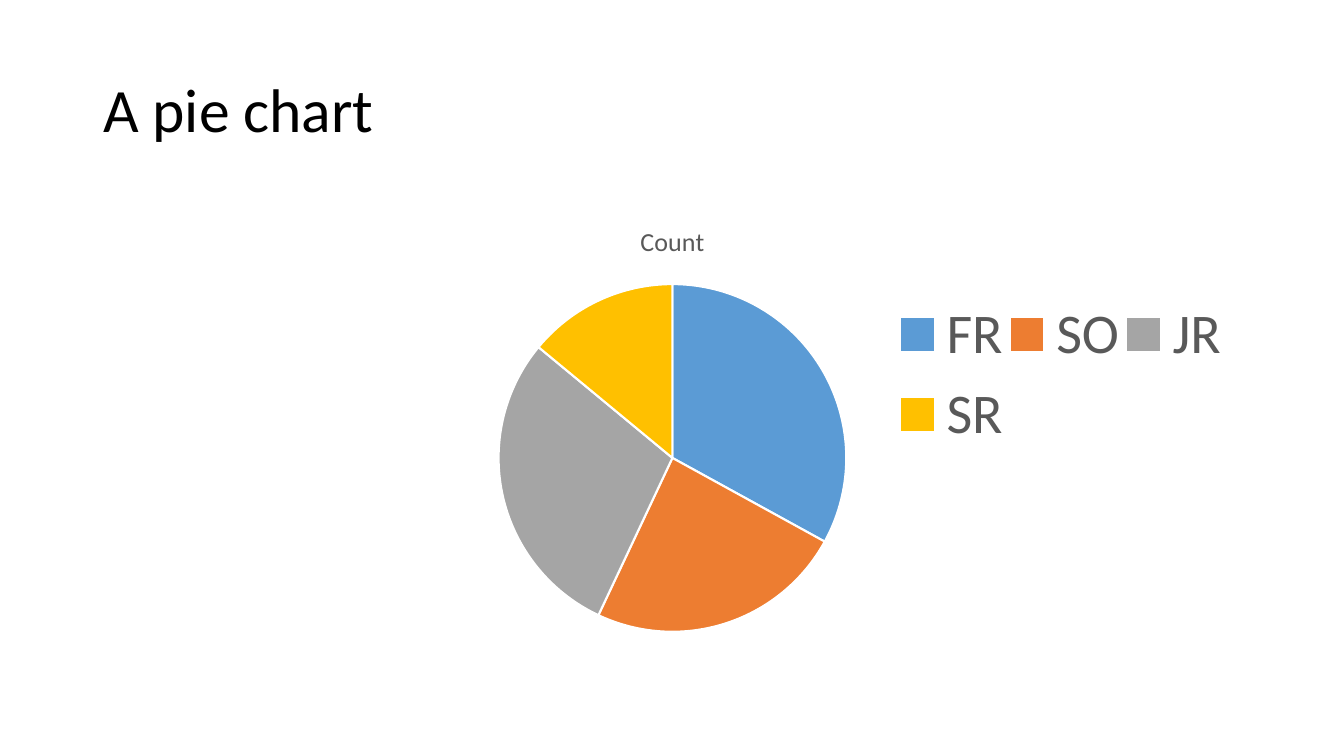
"""Build a slide with a title and a pie chart of counts by class year."""
import pptx
import pptx.chart.data
import pptx.dml.color
import pptx.enum.chart
import pptx.enum.text
import pptx.oxml
import pptx.oxml.ns
import pptx.util

PX = 914400 / 100.8


def px(length):
    return pptx.util.Emu(round(length * PX))


def style(font, size, colour):
    font.name = "Calibri"
    font.size = pptx.util.Pt(size)
    font.bold = False
    font.color.rgb = pptx.dml.color.RGBColor.from_string(colour)


deck = pptx.Presentation()
deck.slide_width, deck.slide_height = px(1344), px(756)
page = deck.slides.add_slide(deck.slide_layouts[5])

title = page.shapes.title
title.left, title.top, title.width, title.height = px(93), px(40), px(1159), px(146)
title.text_frame.vertical_anchor = pptx.enum.text.MSO_ANCHOR.MIDDLE
para = title.text_frame.paragraphs[0]
para.alignment = pptx.enum.text.PP_ALIGN.LEFT
para.line_spacing = 0.9
span = para.add_run()
span.text = "A pie chart"
style(span.font, 44, "000000")

counts = pptx.chart.data.CategoryChartData()
counts.categories = ["FR", "SO", "JR", "SR"]
counts.add_series("Count", [33, 24, 29, 14])
chart = page.shapes.add_chart(
    pptx.enum.chart.XL_CHART_TYPE.PIE, px(93), px(202), px(1159), px(539), counts
).chart
style(chart.font, 10, "000000")

chart.has_title = True
span = chart.chart_title.text_frame.paragraphs[0].add_run()
span.text = "Count"
style(span.font, 18.6, "595959")

chart.has_legend = True
chart.legend.position = pptx.enum.chart.XL_LEGEND_POSITION.BOTTOM
chart.legend.include_in_layout = False
style(chart.legend.font, 40, "595959")

pie = chart.plots[0]
pie.vary_by_categories = True
for index, colour in enumerate(["5B9BD5", "ED7D31", "A5A5A5", "FFC000"]):
    slice_format = pie.series[0].points[index].format
    slice_format.fill.solid()
    slice_format.fill.fore_color.rgb = pptx.dml.color.RGBColor.from_string(colour)
    slice_format.line.color.rgb = pptx.dml.color.RGBColor.from_string("FFFFFF")
    slice_format.line.width = pptx.util.Pt(1.5)

plot_area = chart.element.find(".//" + pptx.oxml.ns.qn("c:plotArea"))
legend = chart.element.find(".//" + pptx.oxml.ns.qn("c:legend"))
for parent, position, target, (x, y, w, h) in [
    (plot_area, 0, '<c:layoutTarget val="inner"/>', (0.35, 0.15, 0.3, 0.65)),
    (legend, 1, "", (0.69, 0.16, 0.29, 0.32)),
]:
    for old in parent.findall(pptx.oxml.ns.qn("c:layout")):
        parent.remove(old)
    parent.insert(position, pptx.oxml.parse_xml(
        f'<c:layout {pptx.oxml.ns.nsdecls("c")}><c:manualLayout>{target}'
        '<c:xMode val="edge"/><c:yMode val="edge"/>'
        f'<c:x val="{x}"/><c:y val="{y}"/><c:w val="{w}"/><c:h val="{h}"/>'
        '</c:manualLayout></c:layout>'
    ))

deck.save("out.pptx")
